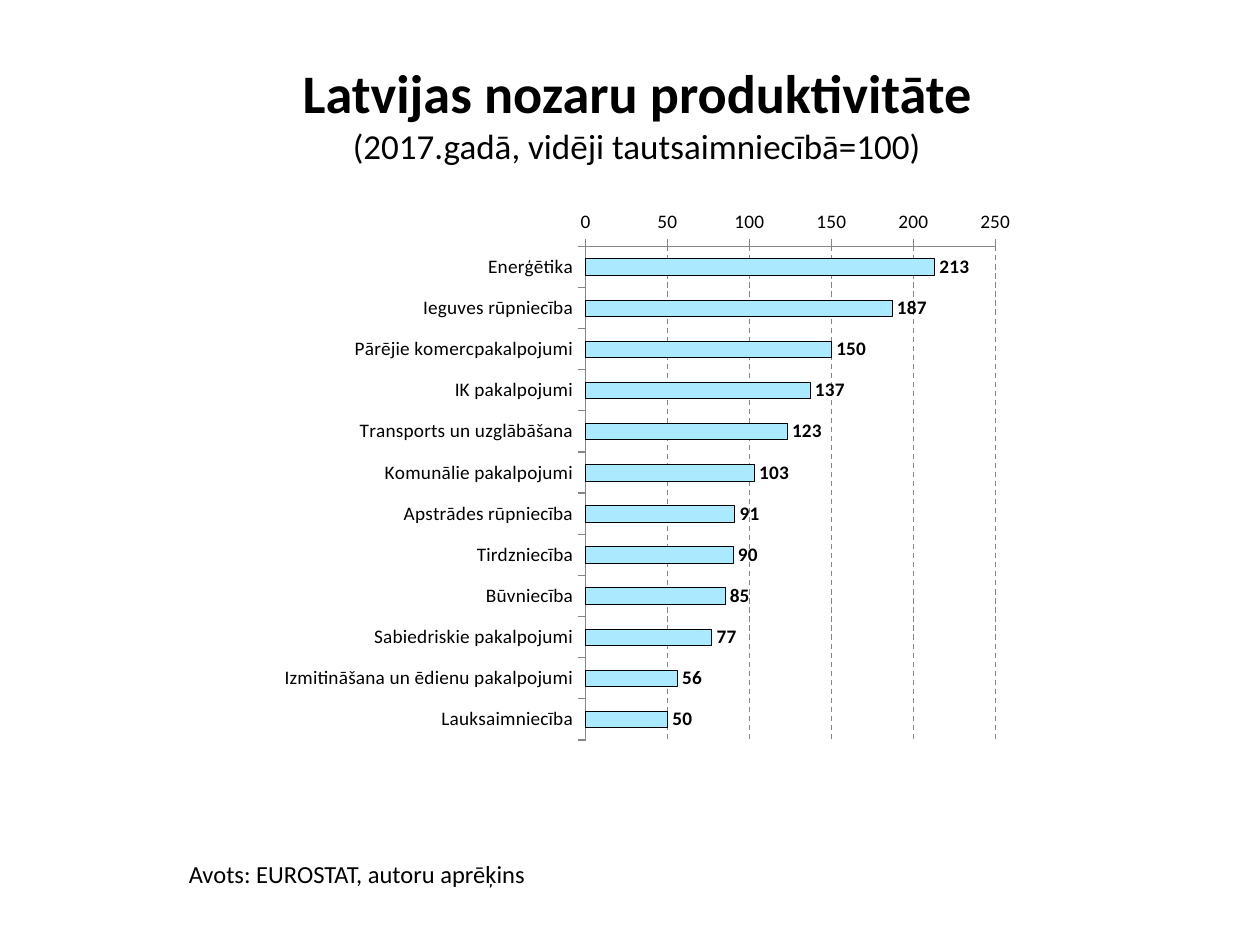
from lxml.etree import SubElement
from pptx import Presentation
from pptx.chart.data import CategoryChartData
from pptx.dml.color import RGBColor
from pptx.enum.chart import XL_CHART_TYPE, XL_LABEL_POSITION, XL_TICK_LABEL_POSITION, XL_TICK_MARK
from pptx.enum.dml import MSO_LINE
from pptx.enum.text import MSO_ANCHOR, PP_ALIGN
from pptx.oxml.ns import qn
from pptx.util import Inches, Pt

COLORS = {"text": "000000", "bar": "ABE9FF", "axis": "868686"}
PRODUCTIVITY = {
    "Enerģētika": 213,
    "Ieguves rūpniecība": 187,
    "Pārējie komercpakalpojumi": 150,
    "IK pakalpojumi": 137,
    "Transports un uzglābāšana": 123,
    "Komunālie pakalpojumi": 103,
    "Apstrādes rūpniecība": 91,
    "Tirdzniecība": 90,
    "Būvniecība": 85,
    "Sabiedriskie pakalpojumi": 77,
    "Izmitināšana un ēdienu pakalpojumi": 56,
    "Lauksaimniecība": 50,
}


class SlideBuilder:
    font = "Calibri"
    label_size = 11

    def __init__(self, prs):
        self.width, self.height = prs.slide_width, prs.slide_height
        self.s = prs.slides.add_slide(prs.slide_layouts[6])

    def box(self, x, y, w, h):
        """Turn percentages of the slide's size into lengths."""
        return [int(share * side / 100) for share, side in
                zip((x, y, w, h), (self.width, self.height) * 2)]

    def style_font(self, font, size, bold=False):
        font.name, font.size, font.bold = self.font, Pt(size), bold
        font.color.rgb = RGBColor.from_string(COLORS["text"])

    def style_line(self, line, color, width):
        line.color.rgb = RGBColor.from_string(COLORS[color])
        line.width = Pt(width)

    def text(self, area, lines, align=PP_ALIGN.LEFT, anchor=MSO_ANCHOR.TOP, wrap=True):
        """Add one paragraph of (text, size, bold) lines."""
        tf = self.s.shapes.add_textbox(*self.box(*area)).text_frame
        tf.word_wrap, tf.vertical_anchor = wrap, anchor
        p = tf.paragraphs[0]
        p.alignment = align
        for i, (words, size, bold) in enumerate(lines):
            if i:
                p.add_line_break()
            r = p.add_run()
            r.text = words
            self.style_font(r.font, size, bold)

    def style_axis(self, axis):
        axis.major_tick_mark = XL_TICK_MARK.OUTSIDE
        axis.minor_tick_mark = XL_TICK_MARK.NONE
        self.style_font(axis.tick_labels.font, self.label_size)
        self.style_line(axis.format.line, "axis", 0.75)

    def bar_chart(self, area, values, plot_area):
        data = CategoryChartData(number_format="0")
        data.categories = list(values)
        data.add_series("Series 1", list(values.values()))
        chart = self.s.shapes.add_chart(
            XL_CHART_TYPE.BAR_CLUSTERED, *self.box(*area), data).chart
        chart.has_legend = chart.has_title = False
        self.style_font(chart.font, 10)

        cat, val = chart.category_axis, chart.value_axis
        for axis in (cat, val):
            self.style_axis(axis)
        cat.reverse_order = True
        cat.tick_label_position = XL_TICK_LABEL_POSITION.LOW
        val.minimum_scale, val.maximum_scale, val.major_unit = 0, 250, 50
        val.has_major_gridlines = True
        grid = val.major_gridlines.format.line
        self.style_line(grid, "axis", 0.75)
        grid.dash_style = MSO_LINE.DASH

        plot = chart.plots[0]
        plot.gap_width, plot.vary_by_categories = 150, False
        bars = plot.series[0].format
        bars.fill.solid()
        bars.fill.fore_color.rgb = RGBColor.from_string(COLORS["bar"])
        self.style_line(bars.line, "text", 0.25)
        plot.has_data_labels = True
        labels = plot.data_labels
        labels.show_value, labels.position = True, XL_LABEL_POSITION.OUTSIDE_END
        labels.number_format, labels.number_format_is_linked = "0", False
        self.style_font(labels.font, self.label_size, bold=True)
        self.place_plot(plot, plot_area)

    def place_plot(self, plot, area):
        """Fix the inner plot area, given as shares of the chart."""
        parent = plot._element.getparent()
        for old in parent.findall(qn("c:layout")):
            parent.remove(old)
        layout = SubElement(parent, qn("c:layout"))
        parent.insert(0, layout)
        manual = SubElement(layout, qn("c:manualLayout"))
        settings = [("layoutTarget", "inner"), ("xMode", "edge"), ("yMode", "edge")]
        for tag, value in settings + list(zip("xywh", area)):
            SubElement(manual, qn(f"c:{tag}")).set("val", str(value))


def main():
    prs = Presentation()
    prs.slide_width, prs.slide_height = Inches(10), Inches(7.5)
    slide = SlideBuilder(prs)
    slide.text((6, 4, 89.1, 15.87),
               [("Latvijas nozaru produktivitāte", 31, True),
                ("(2017.gadā, vidēji tautsaimniecībā=100)", 20, False)],
               PP_ALIGN.CENTER, MSO_ANCHOR.MIDDLE)
    slide.bar_chart((11, 22.27, 73.9, 59.6), PRODUCTIVITY, (0.48, 0.06, 0.44, 0.88))
    slide.text((14, 90.27, 29, 8.53),
               [("Avots: EUROSTAT, autoru aprēķins", 14, False)], wrap=False)
    prs.save("out.pptx")


if __name__ == "__main__":
    main()
